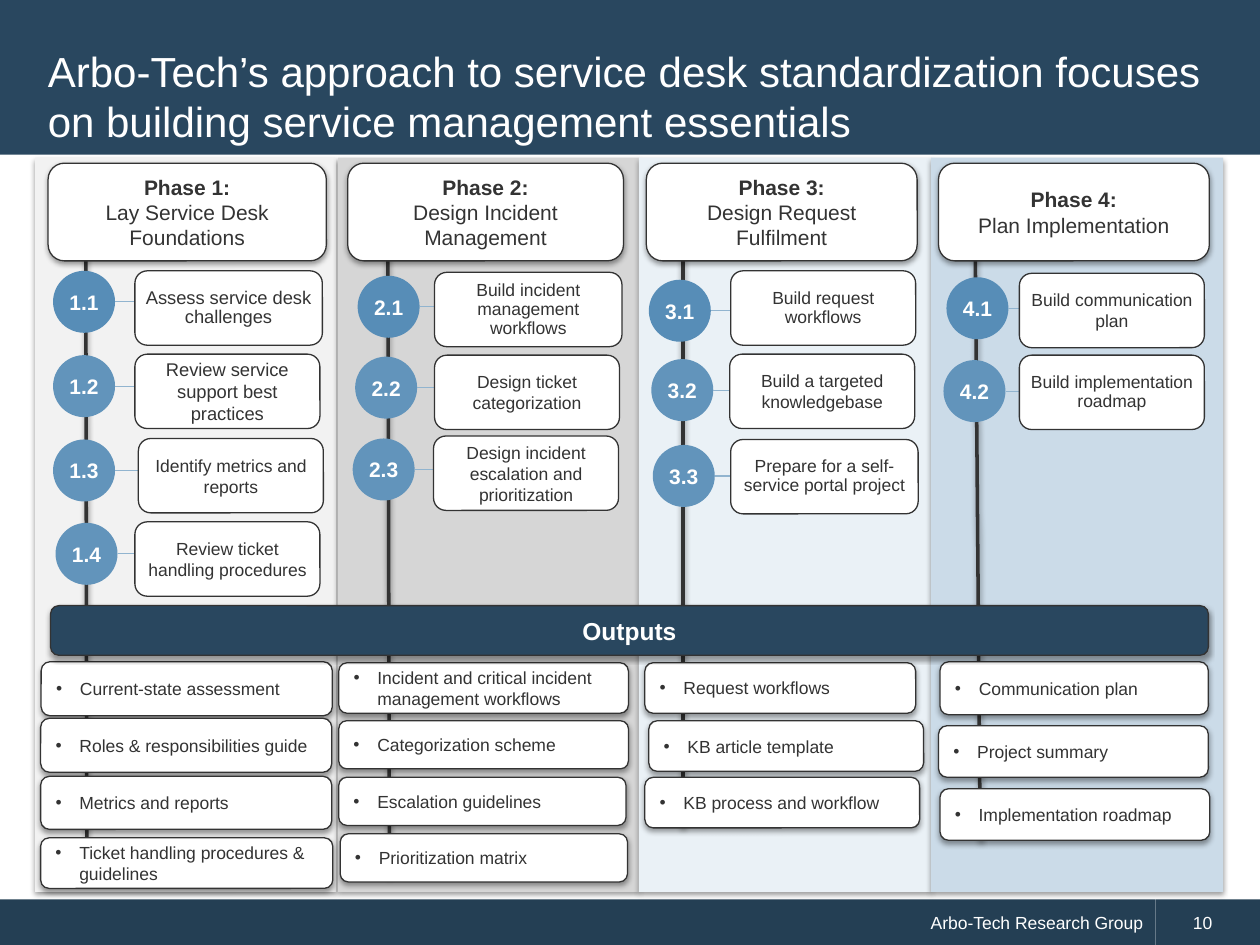
from dataclasses import dataclass

from lxml import etree
from pptx import Presentation
from pptx.dml import color as dml
from pptx.enum import shapes, text
from pptx.oxml import ns
from pptx.util import Cm, Pt


@dataclass(frozen=True)
class Theme:
    font: str = "Arial"
    white: str = "FFFFFF"
    ink: str = "333333"
    banner: str = "29475F"
    footer: str = "243F54"
    link: str = "91B4CF"
    first_disc: str = "578DB7"
    disc: str = "6294BB"
    title_size: float = 24
    bar_size: float = 14
    heading_size: float = 12
    body_size: float = 10
    hairline: float = 0.75
    spine: float = 2


@dataclass
class Step:
    number: str
    label: str
    disc: tuple
    card: tuple
    size: float = 10
    spacing: float = 1.0


@dataclass
class Phase:
    heading: str
    fill: str
    panel: tuple
    header: tuple
    spine: tuple
    steps: list
    outputs: list


THEME = Theme()
DISC_SIZE = 1.25
CARD_HEIGHT = 1.5

PHASES = [
    Phase("Phase 1:\nLay Service Desk Foundations", "F2F2F2",
          (0.71, 6.07), (0.97, 5.61), (1.73, 1.75, 17.3),
          [Step("1.1", "Assess service desk challenges", (1.07, 5.46), (2.72, 5.46, 3.78), 10.5, 0.9),
           Step("1.2", "Review service support best practices", (1.07, 7.16), (2.72, 7.14, 3.73), 10.5),
           Step("1.3", "Identify metrics and reports", (1.07, 8.86), (2.79, 8.84, 3.73)),
           Step("1.4", "Review ticket handling procedures", (1.12, 10.54), (2.72, 10.52, 3.73))],
          [("Current-state assessment", (0.83, 13.34, 5.87, 1.09)),
           ("Roles & responsibilities guide", (0.82, 14.48, 5.87, 1.09)),
           ("Metrics and reports", (0.82, 15.65, 5.87, 1.07)),
           ("Ticket handling procedures & guidelines", (0.82, 16.89, 5.89, 1.02))]),
    Phase("Phase 2:\nDesign Incident Management", "D6D6D6",
          (6.81, 6.07), (7.01, 5.56), (7.82, 7.85, 17.65),
          [Step("2.1", "Build incident management workflows", (7.21, 5.56), (8.76, 5.49, 3.78), spacing=0.9),
           Step("2.2", "Design ticket categorization", (7.16, 7.19), (8.76, 7.16, 3.73)),
           Step("2.3", "Design incident escalation and prioritization", (7.11, 8.84), (8.74, 8.79, 3.73))],
          [("Incident and critical incident management workflows", (6.83, 13.36, 5.84, 1.02)),
           ("Categorization scheme", (6.83, 14.53, 5.84, 0.97)),
           ("Escalation guidelines", (6.83, 15.67, 5.79, 0.97)),
           ("Prioritization matrix", (6.86, 16.81, 5.79, 0.97))]),
    Phase("Phase 3:\nDesign Request\nFulfilment", "EAF1F6",
          (12.88, 5.89), (13.03, 5.46), (13.77, 13.77, 16.66),
          [Step("3.1", "Build request workflows", (13.08, 5.64), (14.73, 5.46, 3.73), spacing=0.9),
           Step("3.2", "Build a targeted knowledgebase", (13.13, 7.24), (14.71, 7.14, 3.73)),
           Step("3.3", "Prepare for a self-service portal project", (13.16, 8.97), (14.73, 8.86, 3.78), spacing=0.9)],
          [("Request workflows", (13, 13.36, 5.46, 1.02)),
           ("KB article template", (13.08, 14.53, 5.54, 1.02)),
           ("KB process and workflow", (13, 15.67, 5.54, 1.02))]),
    Phase("Phase 4:\nPlan Implementation", "CBDBE8",
          (18.77, 5.89), (18.92, 5.46), (19.66, 19.76, 16.94),
          [Step("4.1", "Build communication plan", (19.08, 5.59), (20.55, 5.51, 3.73)),
           Step("4.2", "Build implementation roadmap", (19.02, 7.26), (20.55, 7.16, 3.73), spacing=0.9)],
          [("Communication plan", (18.95, 13.34, 5.41, 1.07)),
           ("Project summary", (18.92, 14.63, 5.44, 1.04)),
           ("Implementation roadmap", (18.95, 15.9, 5.44, 1.04))]),
]


def rgb(value):
    return dml.RGBColor.from_string(value)


def set_effects(shape, shadow):
    effects = etree.SubElement(shape._element.spPr, ns.qn("a:effectLst"))
    if shadow:
        outer = etree.SubElement(effects, ns.qn("a:outerShdw"), blurRad=str(Pt(3.1)),
                                 dist=str(Pt(1.6)), dir="5400000", rotWithShape="0")
        tint = etree.SubElement(outer, ns.qn("a:srgbClr"), val="000000")
        etree.SubElement(tint, ns.qn("a:alpha"), val="38000")


def add_box(slide, kind, box, fill, outline=None, shadow=False):
    shape = slide.shapes.add_shape(kind, *(Cm(length) for length in box))
    shape.fill.solid()
    shape.fill.fore_color.rgb = rgb(fill)
    if outline:
        shape.line.color.rgb = rgb(outline)
        shape.line.width = Pt(THEME.hairline)
    else:
        shape.line.fill.background()
    set_effects(shape, shadow)
    return shape


def add_rectangle(slide, box, fill, shadow=False):
    return add_box(slide, shapes.MSO_SHAPE.RECTANGLE, box, fill, shadow=shadow)


def add_card(slide, box, fill=THEME.white, shadow=True):
    return add_box(slide, shapes.MSO_SHAPE.ROUNDED_RECTANGLE, box, fill, THEME.ink, shadow)


def write(shape, content, size, color=THEME.ink, bold=False, align=text.PP_ALIGN.CENTER, spacing=None):
    frame = shape.text_frame
    frame.text = content
    frame.word_wrap = True
    frame.vertical_anchor = text.MSO_ANCHOR.MIDDLE
    for paragraph in frame.paragraphs:
        paragraph.alignment = align
        paragraph.line_spacing = spacing
        for run in paragraph.runs:
            run.font.name = THEME.font
            run.font.size = Pt(size)
            run.font.bold = bold
            run.font.color.rgb = rgb(color)


def set_side_margins(shape, margin):
    shape.text_frame.margin_left = shape.text_frame.margin_right = Cm(margin)


def add_line(slide, start, end, color, width, shadow=False):
    line = slide.shapes.add_connector(shapes.MSO_CONNECTOR.STRAIGHT,
                                      *(Cm(length) for length in (*start, *end)))
    line.line.color.rgb = rgb(color)
    line.line.width = Pt(width)
    set_effects(line, shadow)
    return line


def add_title(slide, content):
    banner = add_rectangle(slide, (0, 0, 25.4, 3.12), THEME.banner)
    slide.shapes._spTree.insert(2, banner._element)
    title = slide.shapes.title
    title.left, title.top, title.width, title.height = Cm(0.71), Cm(0.71), Cm(23.95), Cm(2.44)
    write(title, content, THEME.title_size, THEME.white, align=text.PP_ALIGN.LEFT)
    title.text_frame.auto_size = text.MSO_AUTO_SIZE.NONE


def add_footer(slide, owner, page):
    strip = add_rectangle(slide, (0, 18.13, 23.29, 0.92), THEME.footer)
    write(strip, owner, THEME.body_size, THEME.white, align=text.PP_ALIGN.RIGHT)
    number = add_rectangle(slide, (23.29, 18.13, 2.11, 0.92), THEME.footer)
    write(number, page, THEME.body_size, THEME.white, align=text.PP_ALIGN.LEFT)
    number.text_frame.margin_left = Cm(0.76)


def add_header(slide, phase):
    left, width = phase.header
    header = add_card(slide, (left, 3.29, width, 1.97))
    write(header, phase.heading, THEME.heading_size)
    header.text_frame.paragraphs[0].runs[0].font.bold = True


def add_step(slide, step, disc_color):
    left, top = step.disc
    card_left, card_top, card_width = step.card
    middle = top + DISC_SIZE / 2
    disc = add_box(slide, shapes.MSO_SHAPE.OVAL, (left, top, DISC_SIZE, DISC_SIZE), disc_color)
    set_side_margins(disc, 0)
    write(disc, step.number, THEME.heading_size, THEME.white, bold=True)
    add_line(slide, (left + DISC_SIZE, middle), (card_left, middle), THEME.link, THEME.hairline)
    card = add_card(slide, (card_left, card_top, card_width, CARD_HEIGHT), shadow=False)
    set_side_margins(card, 0.1)
    write(card, step.label, step.size, spacing=step.spacing)


def add_output(slide, label, box):
    card = add_card(slide, box)
    write(card, label, THEME.body_size, align=text.PP_ALIGN.LEFT)
    properties = card.text_frame.paragraphs[0]._p.get_or_add_pPr()
    properties.set("marL", str(Cm(0.48)))
    properties.set("indent", str(-Cm(0.48)))
    etree.SubElement(properties, ns.qn("a:buFont"), typeface=THEME.font)
    etree.SubElement(properties, ns.qn("a:buChar"), char="•")


def main():
    presentation = Presentation()
    presentation.slide_width, presentation.slide_height = Cm(25.4), Cm(19.05)
    slide = presentation.slides.add_slide(presentation.slide_layouts[5])
    add_title(slide, "Arbo-Tech’s approach to service desk standardization focuses "
                     "on building service management essentials")
    add_footer(slide, "Arbo-Tech Research Group", "10")
    for phase in PHASES:
        left, width = phase.panel
        add_rectangle(slide, (left, 3.18, width, 14.8), phase.fill, shadow=True)
    for phase in PHASES:
        top_x, bottom_x, bottom = phase.spine
        add_line(slide, (top_x, 5), (bottom_x, bottom), THEME.ink, THEME.spine, shadow=True)
        add_header(slide, phase)
        for index, step in enumerate(phase.steps):
            add_step(slide, step, THEME.disc if index else THEME.first_disc)
        for label, box in phase.outputs:
            add_output(slide, label, box)
    bar = add_card(slide, (1.02, 12.21, 23.34, 1), THEME.banner)
    write(bar, "Outputs", THEME.bar_size, THEME.white, bold=True)
    presentation.save("out.pptx")


if __name__ == "__main__":
    main()
